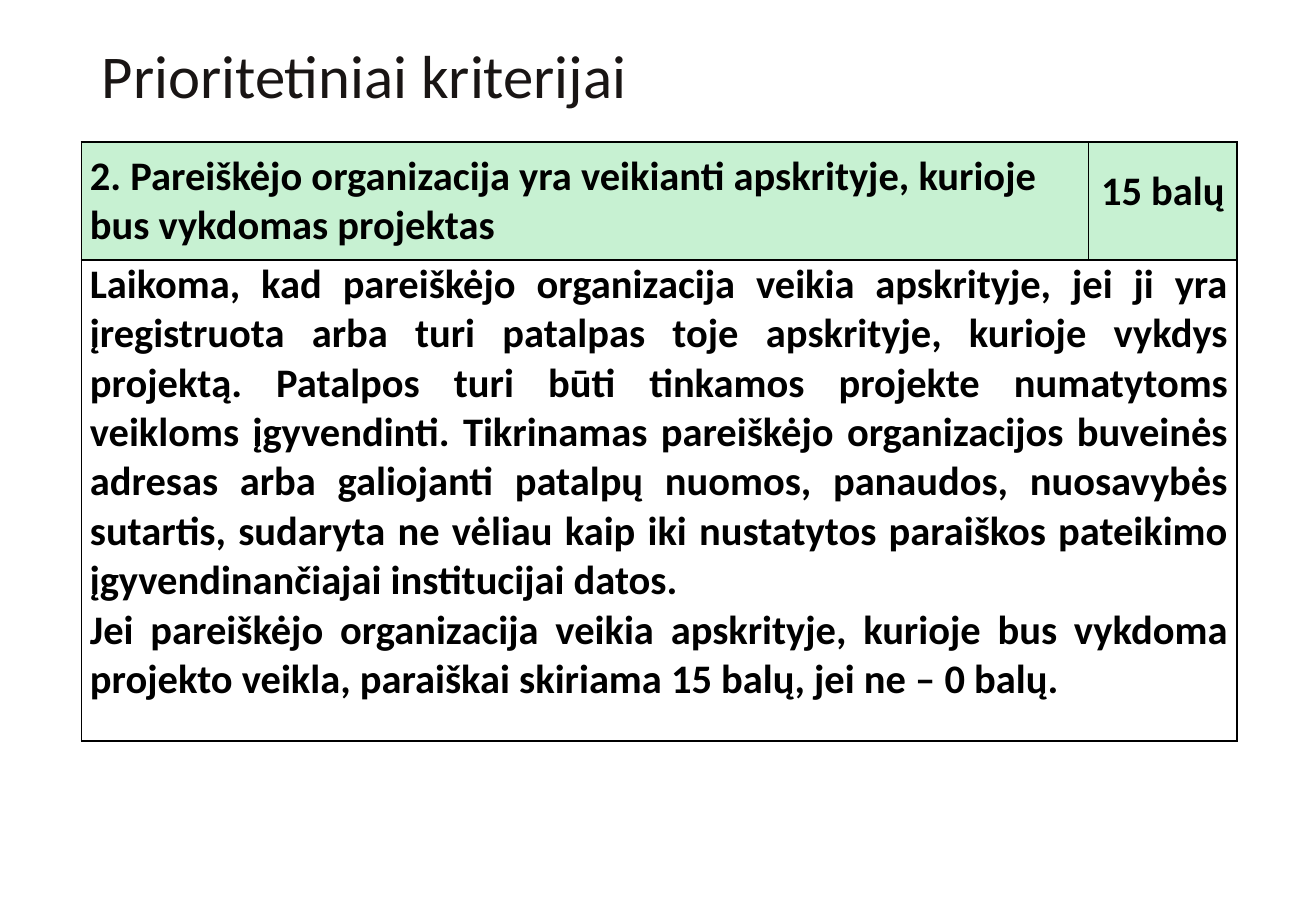
"""Build the slide on priority criteria with its scoring table."""
from dataclasses import dataclass

from lxml import etree
from pptx import Presentation
from pptx.dml.color import RGBColor
from pptx.enum.text import MSO_ANCHOR, PP_ALIGN
from pptx.oxml.ns import qn
from pptx.util import Inches, Pt

LEFT, CENTER, JUSTIFY = PP_ALIGN.LEFT, PP_ALIGN.CENTER, PP_ALIGN.JUSTIFY
TOP, MIDDLE = MSO_ANCHOR.TOP, MSO_ANCHOR.MIDDLE


@dataclass(frozen=True)
class Theme:
    font: str = "Calibri"
    title_size: int = 36
    table_size: int = 24
    title_color: str = "191514"
    text_color: str = "000000"
    border_color: str = "000000"
    header_fill: str = "C7F1D2"


THEME = Theme()
SLIDE_SIZE = (10.83, 7.5)
TITLE = "Prioritetiniai kriterijai"
TITLE_AREA = (0.74, 0.35, 9.34, 0.59)
TABLE_ORIGIN = (0.67, 1.17)
COLUMNS = (8.29, 1.22)
ROWS = (0.97, 3.96)
SIDE_MARGIN = 0.07

CRITERION = "2. Pareiškėjo organizacija yra veikianti apskrityje, kurioje bus vykdomas projektas"
POINTS = "15 balų"
EXPLANATION = (
    "Laikoma, kad pareiškėjo organizacija veikia apskrityje, jei ji yra įregistruota "
    "arba turi patalpas toje apskrityje, kurioje vykdys projektą. Patalpos turi būti "
    "tinkamos projekte numatytoms veikloms įgyvendinti. Tikrinamas pareiškėjo "
    "organizacijos buveinės adresas arba galiojanti patalpų nuomos, panaudos, "
    "nuosavybės sutartis, sudaryta ne vėliau kaip iki nustatytos paraiškos pateikimo "
    "įgyvendinančiajai institucijai datos.\n"
    "Jei pareiškėjo organizacija veikia apskrityje, kurioje bus vykdoma projekto "
    "veikla, paraiškai skiriama 15 balų, jei ne – 0 balų."
)
CELLS = (
    (0, 0, CRITERION, LEFT, MIDDLE, 0.08, THEME.header_fill, None),
    (0, 1, POINTS, CENTER, MIDDLE, 0.04, THEME.header_fill, Pt(18)),
    (1, 0, EXPLANATION, JUSTIFY, TOP, 0, None, None),
)


def style_text(frame, size, color, bold, alignment, spacing):
    for para in frame.paragraphs:
        para.alignment = alignment
        if spacing is not None:
            para.line_spacing = spacing
        for span in para.runs:
            span.font.name = THEME.font
            span.font.size = Pt(size)
            span.font.bold = bold
            span.font.color.rgb = RGBColor.from_string(color)


def add_borders(cell):
    properties = cell._tc.get_or_add_tcPr()
    for side in ("a:lnL", "a:lnR", "a:lnT", "a:lnB"):
        line = etree.SubElement(properties, qn(side), w=str(Pt(1)))
        fill = etree.SubElement(line, qn("a:solidFill"))
        etree.SubElement(fill, qn("a:srgbClr"), val=THEME.border_color)


def add_title(page):
    box = page.shapes.add_textbox(*map(Inches, TITLE_AREA))
    frame = box.text_frame
    frame.word_wrap = True
    frame.vertical_anchor = MIDDLE
    frame.text = TITLE
    style_text(frame, THEME.title_size, THEME.title_color, False, LEFT, 0.9)


def add_criteria_table(page):
    area = (*TABLE_ORIGIN, sum(COLUMNS), sum(ROWS))
    table = page.shapes.add_table(len(ROWS), len(COLUMNS), *map(Inches, area)).table
    table.first_row = table.horz_banding = False
    for column, width in zip(table.columns, COLUMNS):
        column.width = Inches(width)
    for row, height in zip(table.rows, ROWS):
        row.height = Inches(height)
    table.cell(1, 0).merge(table.cell(1, 1))
    for cell in table.iter_cells():
        add_borders(cell)
        cell.fill.background()
    for row, column, text, alignment, anchor, margin, fill, spacing in CELLS:
        cell = table.cell(row, column)
        cell.text_frame.text = text
        cell.vertical_anchor = anchor
        cell.margin_left = cell.margin_right = Inches(SIDE_MARGIN)
        cell.margin_top = cell.margin_bottom = Inches(margin)
        if fill:
            cell.fill.solid()
            cell.fill.fore_color.rgb = RGBColor.from_string(fill)
        style_text(cell.text_frame, THEME.table_size, THEME.text_color, True, alignment, spacing)


def main():
    deck = Presentation()
    deck.slide_width, deck.slide_height = map(Inches, SLIDE_SIZE)
    page = deck.slides.add_slide(deck.slide_layouts[6])
    add_title(page)
    add_criteria_table(page)
    deck.save("out.pptx")


if __name__ == "__main__":
    main()
